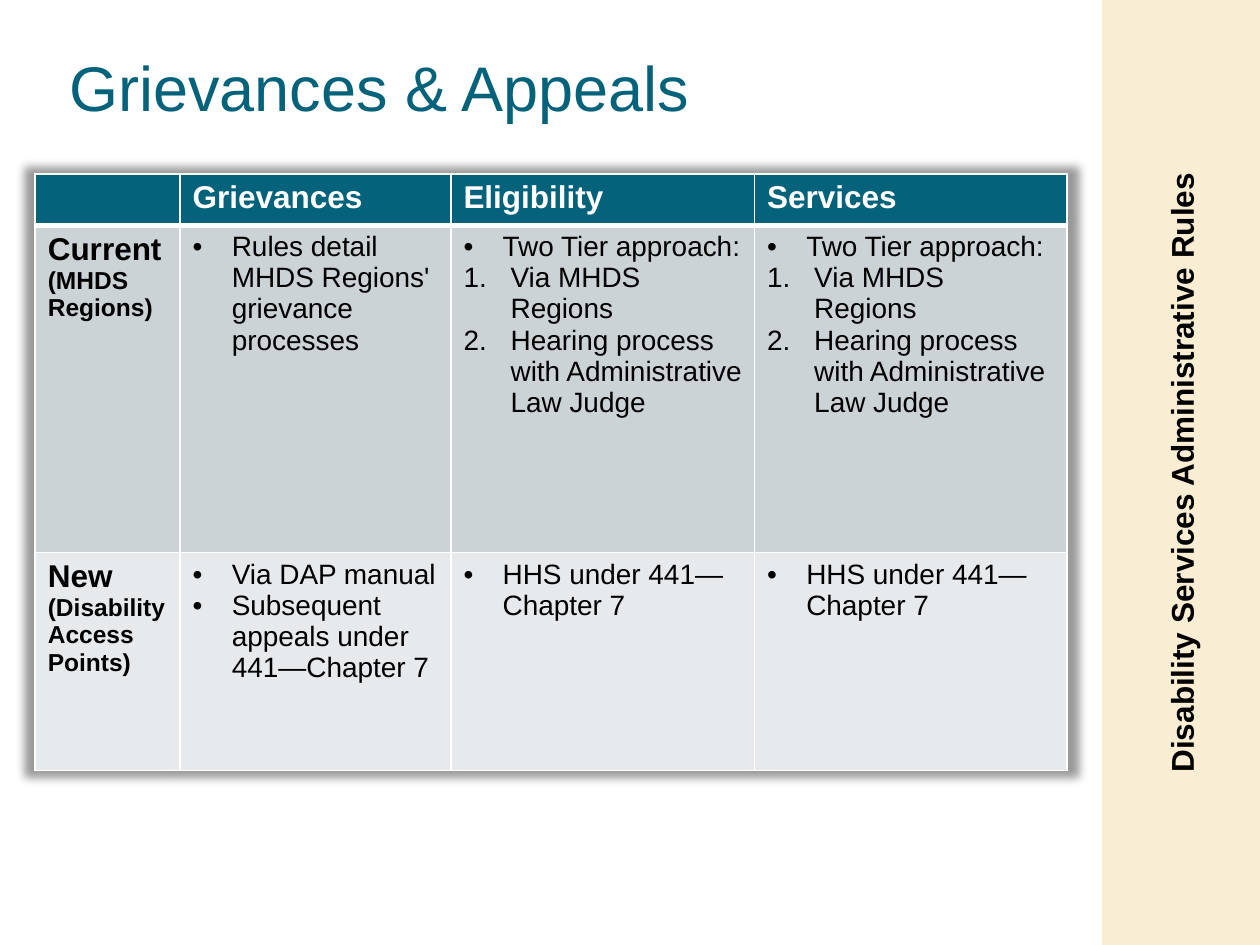
from dataclasses import dataclass
from itertools import product

from lxml.etree import SubElement
from pptx import Presentation
from pptx.dml.color import RGBColor
from pptx.enum.shapes import MSO_SHAPE
from pptx.enum.text import MSO_ANCHOR, PP_ALIGN
from pptx.oxml import parse_xml
from pptx.oxml.ns import nsdecls, qn
from pptx.util import Cm, Pt


@dataclass(frozen=True)
class Theme:
    font: str = "Arial"
    teal: str = "04627A"
    sand: str = "F9EDD4"
    white: str = "FFFFFF"
    black: str = "000000"
    bands: tuple = ("CCD3D7", "E7EAEC")
    title: int = 36
    head: int = 18
    body: int = 16
    note: int = 14


THEME = Theme()
WIDTHS = (2.92, 5.46, 6.12, 6.3)
HEIGHTS = (1.02, 6.6, 4.39)
HEADS = ("", "Grievances", "Eligibility", "Services")

# Each row: name, notes below the name, then one list of (mark, text) per column.
DOT, NUM = "dot", "num"
ROWS = (
    ("Current", ("(MHDS ", "Regions)"), (
        ((DOT, "Rules detail MHDS Regions' grievance processes"),),
        ((DOT, "Two Tier approach: "),
         (NUM, "Via MHDS Regions"),
         (NUM, "Hearing process with Administrative Law Judge")),
        ((DOT, "Two Tier approach: "),
         (NUM, "Via MHDS  Regions"),
         (NUM, "Hearing process with Administrative Law Judge")),
    )),
    ("New", ("(Disability Access Points)",), (
        ((DOT, "Via DAP manual"),
         (DOT, "Subsequent appeals under 441—Chapter 7")),
        ((DOT, "HHS under 441—Chapter 7"),),
        ((DOT, "HHS under 441—Chapter 7"),),
    )),
)


def paint(fill, color):
    fill.solid()
    fill.fore_color.rgb = RGBColor.from_string(color)


def style(para, size, color, bold=False):
    font = para.font
    font.name, font.size, font.bold = THEME.font, Pt(size), bold
    font.color.rgb = RGBColor.from_string(color)


def mark(para, kind):
    """Give the paragraph a hanging dot or number."""
    props = para._p.get_or_add_pPr()
    indent = Cm(0.79 if kind == DOT else 0.95)
    props.set("marL", str(indent))
    props.set("indent", str(-indent))
    SubElement(props, qn("a:buFont"), typeface=THEME.font)
    if kind == DOT:
        SubElement(props, qn("a:buChar"), char="•")
    else:
        SubElement(props, qn("a:buAutoNum"), type="arabicPeriod")


def fill_cell(cell, lines):
    """Write lines of (mark, text, size, color, bold) into the cell."""
    frame = cell.text_frame
    for i, (kind, text, *look) in enumerate(lines):
        para = frame.add_paragraph() if i else frame.paragraphs[0]
        para.text = text
        if kind:
            mark(para, kind)
        style(para, *look)


def edge(cell, base):
    """Rule the cell in white, with its own width for the bottom line."""
    props = cell._tc.get_or_add_tcPr()
    sides = (("L", 1), ("R", 1), ("T", 1), ("B", base))
    for i, (side, width) in enumerate(sides):
        props.insert(i, parse_xml(
            f'<a:ln{side} {nsdecls("a")} w="{Pt(width)}"><a:solidFill>'
            f'<a:srgbClr val="{THEME.white}"/></a:solidFill></a:ln{side}>'))


def glow(table):
    """Add a soft shadow on all sides of the table."""
    table._tbl.tblPr.insert(0, parse_xml(
        f'<a:effectLst {nsdecls("a")}><a:outerShdw blurRad="63500" '
        'sx="102000" sy="102000" algn="ctr" rotWithShape="0">'
        f'<a:srgbClr val="{THEME.black}"><a:alpha val="40000"/></a:srgbClr>'
        '</a:outerShdw></a:effectLst>'))


def add_title(slide, text):
    title = slide.shapes.title
    title.left, title.top = Cm(1.14), Cm(1.02)
    title.width, title.height = Cm(20.37), Cm(3.3)
    frame = title.text_frame
    frame.vertical_anchor = MSO_ANCHOR.TOP
    para = frame.paragraphs[0]
    para.text = text
    para.alignment = PP_ALIGN.LEFT
    para.line_spacing = 0.9
    style(para, THEME.title, THEME.teal)


def add_grid(slide):
    table = slide.shapes.add_table(
        len(HEIGHTS), len(WIDTHS), Cm(0.71), Cm(3.51),
        Cm(sum(WIDTHS)), Cm(sum(HEIGHTS))).table
    for col, width in zip(table.columns, WIDTHS):
        col.width = Cm(width)
    for row, height in zip(table.rows, HEIGHTS):
        row.height = Cm(height)
    fills = (THEME.teal, *THEME.bands)
    for r, c in product(range(len(HEIGHTS)), range(len(WIDTHS))):
        cell = table.cell(r, c)
        paint(cell.fill, fills[r])
        edge(cell, 1 if r else 3)
    for c, text in enumerate(HEADS):
        if text:
            fill_cell(table.cell(0, c),
                      [(None, text, THEME.head, THEME.white, True)])
    for r, (name, notes, lists) in enumerate(ROWS, 1):
        label = [(None, name, THEME.head, THEME.black, True)]
        label += [(None, note, THEME.note, THEME.black, True)
                  for note in notes]
        fill_cell(table.cell(r, 0), label)
        for c, items in enumerate(lists, 1):
            fill_cell(table.cell(r, c),
                      [(*item, THEME.body, THEME.black) for item in items])
    glow(table)


def add_banner(slide, text):
    """Add the side band, with its text running upward."""
    band = slide.shapes.add_shape(
        MSO_SHAPE.RECTANGLE, Cm(14.29), Cm(7.94), Cm(19.05), Cm(3.18))
    band.rotation = 270
    band.shadow.inherit = False
    paint(band.fill, THEME.sand)
    paint(band.line.fill, THEME.sand)
    band.line.width = Pt(1)
    frame = band.text_frame
    frame.vertical_anchor = MSO_ANCHOR.MIDDLE
    para = frame.paragraphs[0]
    para.text = text
    para.alignment = PP_ALIGN.CENTER
    style(para, THEME.head, THEME.black, True)


def main():
    deck = Presentation()
    deck.slide_width, deck.slide_height = Cm(25.4), Cm(19.05)
    slide = deck.slides.add_slide(deck.slide_layouts[5])
    paint(slide.background.fill, THEME.white)
    add_title(slide, "Grievances & Appeals")
    add_grid(slide)
    add_banner(slide, "Disability Services Administrative Rules")
    deck.save("out.pptx")


if __name__ == "__main__":
    main()
